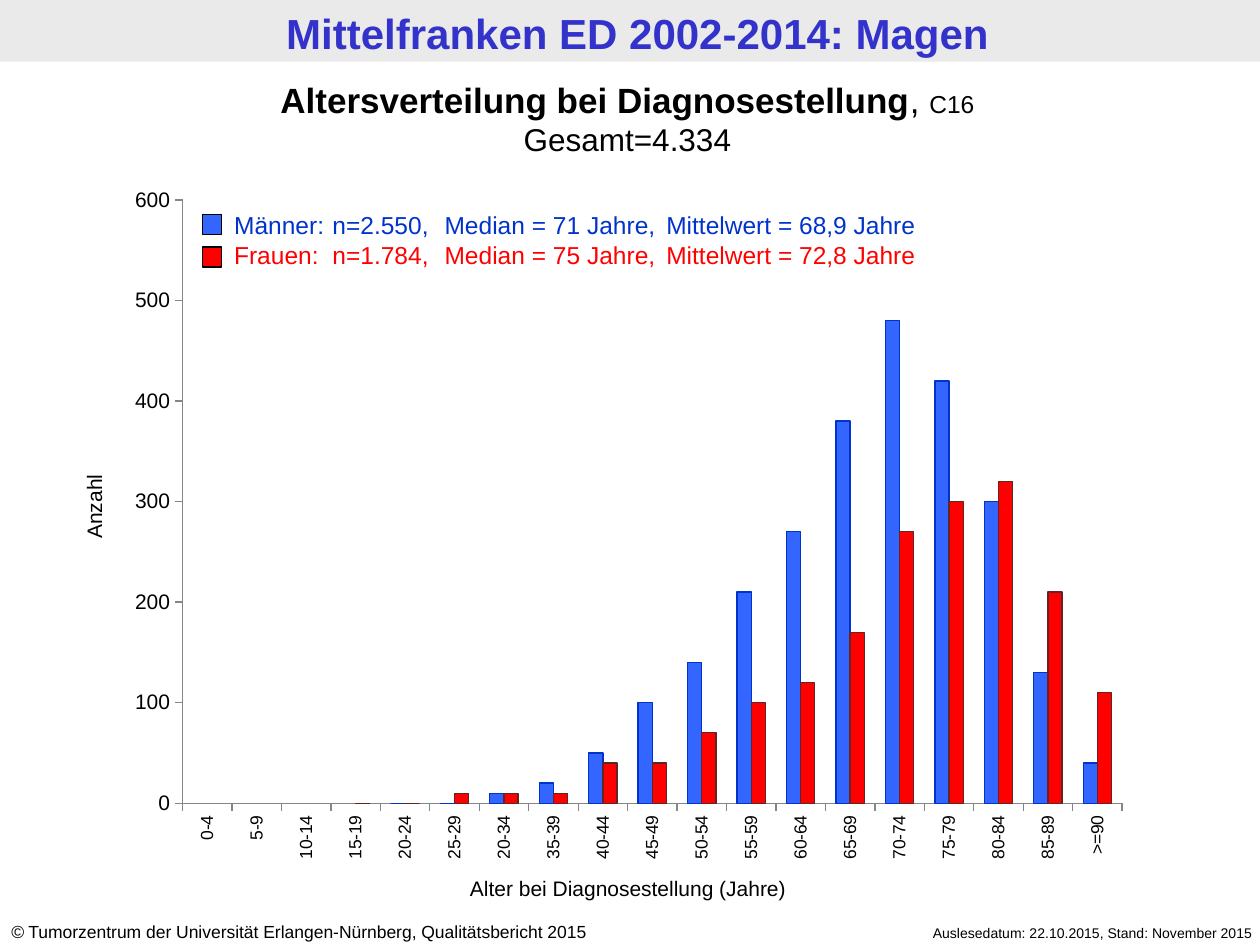
"""Build the slide on age at diagnosis of stomach cancer in Mittelfranken."""
from lxml import etree
from pptx import Presentation
from pptx.chart.data import CategoryChartData as Data
from pptx.dml.color import RGBColor
from pptx.enum.chart import XL_CHART_TYPE as Kind, XL_TICK_MARK as Tick
from pptx.enum.shapes import MSO_SHAPE as Shape
from pptx.enum.text import MSO_AUTO_SIZE as Fit, PP_ALIGN as Align
from pptx.oxml import parse_xml
from pptx.oxml.ns import nsdecls, qn
from pptx.util import Inches, Pt

BLACK = RGBColor(0, 0, 0)
WHITE = RGBColor(255, 255, 255)
BAND = RGBColor(0xEA, 0xEA, 0xEA)
TITLE = RGBColor(0x33, 0x33, 0xCC)
BLUE = RGBColor(0x33, 0x66, 0xFF)
NAVY = RGBColor(0x00, 0x33, 0xCC)
RED = RGBColor(0xFF, 0, 0)
MAROON = RGBColor(0x63, 0x25, 0x23)
GREY = RGBColor(0x86, 0x86, 0x86)

deck = Presentation()
deck.slide_width, deck.slide_height = Inches(10), Inches(7.5)
slide = deck.slides.add_slide(deck.slide_layouts[6])


def add_rect(x, y, w, h, fill, line=None):
    rect = slide.shapes.add_shape(Shape.RECTANGLE, Inches(x), Inches(y), Inches(w), Inches(h))
    rect.shadow.inherit = False
    rect.fill.solid()
    rect.fill.fore_color.rgb = fill
    if line is None:
        rect.line.fill.background()
    else:
        rect.line.color.rgb = line
        rect.line.width = Pt(0.75)


def add_text(x, y, w, h, align, rows, tabs=()):
    box = slide.shapes.add_textbox(Inches(x), Inches(y), Inches(w), Inches(h))
    frame = box.text_frame
    frame.word_wrap = True
    frame.auto_size = Fit.SHAPE_TO_FIT_TEXT
    for i, row in enumerate(rows):
        para = frame.add_paragraph() if i else frame.paragraphs[0]
        para.alignment = align
        if tabs:
            stops = etree.SubElement(para._p.get_or_add_pPr(), qn("a:tabLst"))
            for stop in tabs:
                etree.SubElement(stops, qn("a:tab"), pos=str(Inches(stop)), algn="l")
        for text, size, color, bold, slant in row:
            run = para.add_run()
            run.text = text
            font = run.font
            font.name, font.size = "Arial", Pt(size)
            font.bold, font.italic = bold, slant
            font.color.rgb = color
    return box


add_rect(0, 0, 10, 0.49, BAND)
add_text(0.06, 0.01, 10, 0.49, Align.CENTER,
         [[("Mittelfranken ED 2002-2014: Magen", 24, TITLE, True, False)]])
add_text(6.65, 7.29, 3.39, 0.24, Align.RIGHT,
         [[("Auslesedatum: 22.10.2015, Stand: November 2015", 8, BLACK, False, False)]])
add_text(-0.01, 7.26, 5.24, 0.27, Align.LEFT,
         [[("©", 10, BLACK, False, True),
           (" Tumorzentrum der Universität Erlangen-Nürnberg, Qualitätsbericht 2015",
            10, BLACK, False, False)]])

data = Data()
data.categories = ["0-4", "5-9", "10-14", "15-19", "20-24", "25-29", "20-34", "35-39",
                   "40-44", "45-49", "50-54", "55-59", "60-64", "65-69", "70-74",
                   "75-79", "80-84", "85-89", ">=90"]
data.add_series("Männer", [None] * 4 + [0, 0, 10, 20, 50, 100, 140, 210, 270, 380, 480,
                                        420, 300, 130, 40])
data.add_series("Frauen", [None] * 3 + [0, 0, 10, 10, 10, 40, 40, 70, 100, 120, 170, 270,
                                        300, 320, 210, 110])
chart = slide.shapes.add_chart(Kind.COLUMN_CLUSTERED, Inches(0.91), Inches(1.39),
                               Inches(8.16), Inches(5.55), data).chart
chart.has_legend = False
chart.has_title = False
chart.font.name, chart.font.size = "Calibri", Pt(18)
chart.font.color.rgb = BLACK

plot = chart.plots[0]
plot.gap_width, plot.overlap = 150, 0
plot.vary_by_categories = False
for series, fill, line in zip(plot.series, (BLUE, RED), (NAVY, MAROON)):
    series.format.fill.solid()
    series.format.fill.fore_color.rgb = fill
    series.format.line.color.rgb = line
    series.format.line.width = Pt(0.75)

ages, counts = chart.category_axis, chart.value_axis
for axis, size in ((ages, 10), (counts, 12)):
    axis.has_major_gridlines = False
    axis.major_tick_mark, axis.minor_tick_mark = Tick.OUTSIDE, Tick.NONE
    axis.format.line.color.rgb = GREY
    axis.format.line.width = Pt(0.75)
    font = axis.tick_labels.font
    font.name, font.size = "Arial", Pt(size)
    font.color.rgb = BLACK
counts.minimum_scale, counts.maximum_scale, counts.major_unit = 0, 600, 100
ages._element.find(qn("c:txPr")).find(qn("a:bodyPr")).set("rot", "-5400000")

area = chart._chartSpace.chart.plotArea
for old in area.findall(qn("c:layout")):
    area.remove(old)
area.insert(0, parse_xml(
    f'<c:layout {nsdecls("c")}><c:manualLayout><c:layoutTarget val="inner"/>'
    '<c:xMode val="edge"/><c:yMode val="edge"/><c:x val="0.066"/><c:y val="0.0355"/>'
    '<c:w val="0.914"/><c:h val="0.863"/></c:manualLayout></c:layout>'))
area.append(parse_xml(
    f'<c:spPr {nsdecls("c", "a")}><a:solidFill><a:srgbClr val="{WHITE}"/></a:solidFill></c:spPr>'))

add_text(-0.04, 0.57, 10.04, 0.74, Align.CENTER,
         [[("Altersverteilung bei Diagnosestellung", 20, BLACK, True, False),
           (", ", 20, BLACK, False, False), ("C16", 14, BLACK, False, False)],
          [("Gesamt=4.334", 18, BLACK, False, False)]])
add_text(1.76, 1.62, 6.85, 0.57, Align.LEFT,
         [[("Männer: \tn=2.550, \tMedian = 71 Jahre, \tMittelwert = 68,9 Jahre",
            14, NAVY, False, False)],
          [("Frauen: \tn=1.784, \tMedian = 75 Jahre,\tMittelwert = 72,8 Jahre",
            14, RED, False, False)]], (0.78, 0.88, 1.67, 3.43))
for y, fill in ((1.7, BLUE), (1.96, RED)):
    add_rect(1.61, y, 0.15, 0.16, fill, BLACK)
add_text(3.45, 6.9, 3.07, 0.3, Align.CENTER,
         [[("Alter bei Diagnosestellung (Jahre)", 12, BLACK, False, False)]])
label = add_text(-0.56, 3.87, 2.61, 0.3, Align.CENTER,
                 [[("Anzahl", 12, BLACK, False, False)]])
label.rotation = 270

deck.save("out.pptx")
